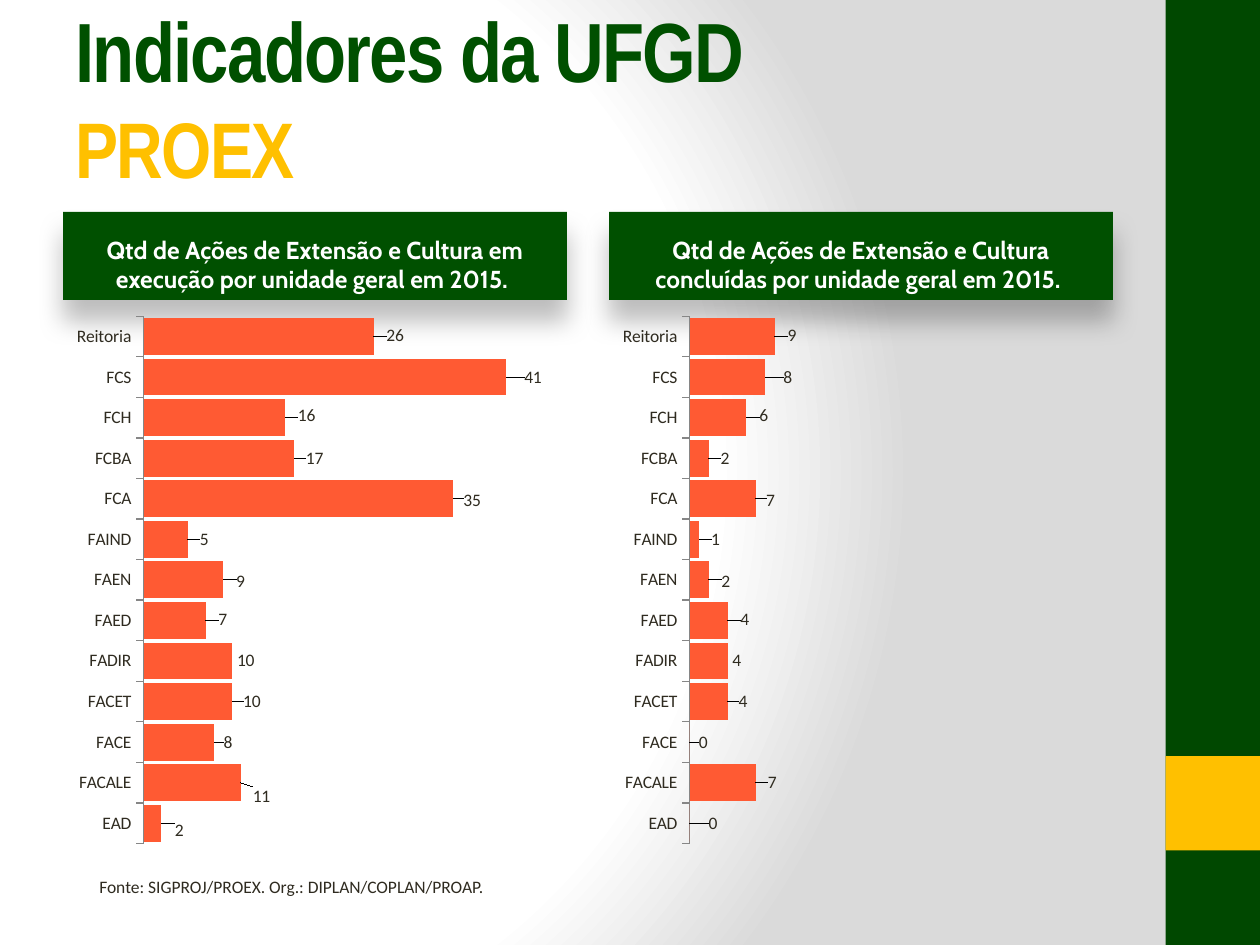
from dataclasses import dataclass

from lxml.etree import SubElement
from pptx import Presentation
from pptx.chart.data import CategoryChartData
from pptx.dml.color import RGBColor
from pptx.enum.chart import XL_CHART_TYPE as ChartType
from pptx.enum.chart import XL_LABEL_POSITION as LabelPos
from pptx.enum.chart import XL_TICK_MARK as Tick
from pptx.enum.shapes import MSO_SHAPE as Shape
from pptx.enum.text import MSO_ANCHOR as Anchor
from pptx.enum.text import MSO_AUTO_SIZE as AutoSize
from pptx.enum.text import PP_ALIGN as Align
from pptx.oxml import parse_xml
from pptx.oxml.ns import nsdecls, qn
from pptx.util import Pt


@dataclass(frozen=True)
class Theme:
    green: str = "005000"
    band_green: str = "004800"
    gold: str = "FFC000"
    bar: str = "FF5A33"
    ink: str = "2F2B20"
    axis: str = "868686"
    white: str = "FFFFFF"
    grey: str = "DADADA"
    title_font: str = "Arial Narrow"
    heading_font: str = "Cabin"
    body_font: str = "Calibri"
    title_size: float = 48
    subtitle_size: float = 45
    heading_size: float = 14
    small_size: float = 10


@dataclass(frozen=True)
class Panel:
    left: float
    heading_idx: int
    heading: str
    values: tuple
    axis_max: float
    moved: dict  # label offsets that differ from the common ones


THEME = Theme()
PANEL_W, HEADING_TOP, HEADING_H, CHART_H = 288, 121, 50.4, 311
UNITS = ("EAD", "FACALE", "FACE", "FACET", "FADIR", "FAED", "FAEN",
         "FAIND", "FCA", "FCBA", "FCH", "FCS", "Reitoria")

# Label offsets from the end of the bar, in points (right, down)
LABEL_OFFSETS = {
    "EAD": (5, 4), "FACALE": (4, 0), "FACE": (2.5, 0.5), "FACET": (3.5, 0),
    "FAED": (4.5, -0.5), "FAEN": (4.5, 1), "FAIND": (4, 0), "FCA": (3, 1),
    "FCBA": (4, 0), "FCH": (4.5, -1), "FCS": (7.5, 0), "Reitoria": (4.5, -0.5),
}
PANELS = (
    Panel(36, 1,
          "Qtd de Ações de Extensão e Cultura em execução por unidade geral em 2015. ",
          (2, 11, 8, 10, 10, 7, 9, 5, 35, 17, 16, 41, 26), 45,
          {"FACALE": (4, 8)}),
    Panel(348, 3,
          "Qtd de Ações de Extensão e Cultura concluídas por unidade geral em 2015. ",
          (0, 7, 0, 4, 4, 4, 2, 1, 7, 2, 6, 8, 9), 42,
          {"EAD": (8, 0)}),
)


def rgb(colour: str) -> RGBColor:
    return RGBColor.from_string(colour)


def place(shape, left: float, top: float, width: float, height: float) -> None:
    shape.left, shape.top = Pt(left), Pt(top)
    shape.width, shape.height = Pt(width), Pt(height)


def write(paragraph, text: str, *, font: str, size: float, colour: str,
          bold: bool = False, align=Align.LEFT, spacing: float = 0) -> None:
    paragraph.alignment = align
    run = paragraph.add_run()
    run.text = text
    run.font.name, run.font.size, run.font.bold = font, Pt(size), bold
    run.font.color.rgb = rgb(colour)
    if spacing:
        run.font._element.set("spc", str(int(spacing * 100)))


def set_background(slide) -> None:
    slide.background.fill.solid()
    properties = slide.element.find(".//" + qn("p:bgPr"))
    stops = "".join(
        f'<a:gs pos="{pos * 1000}"><a:srgbClr val="{colour}"/></a:gs>'
        for pos, colour in ((0, THEME.white), (75, THEME.white), (100, THEME.grey)))
    properties.replace(properties[0], parse_xml(
        f'<a:gradFill {nsdecls("a")} rotWithShape="1"><a:gsLst>{stops}</a:gsLst>'
        '<a:path path="circle"><a:fillToRect l="20000" t="50000" r="100000" b="50000"/>'
        '</a:path></a:gradFill>'))


def add_band(slide, top: float, height: float, colour: str) -> None:
    band = slide.shapes.add_shape(Shape.RECTANGLE, Pt(666), Pt(top), Pt(54), Pt(height))
    band.shadow.inherit = False
    band.fill.solid()
    band.fill.fore_color.rgb = rgb(colour)
    band.line.fill.background()


def add_heading(slide, panel: Panel) -> None:
    heading = slide.placeholders[panel.heading_idx]
    place(heading, panel.left, HEADING_TOP, PANEL_W, HEADING_H)
    heading.fill.solid()
    heading.fill.fore_color.rgb = rgb(THEME.green)
    heading._element.spPr.append(parse_xml(
        f'<a:effectLst {nsdecls("a")}><a:outerShdw blurRad="{Pt(15)}" dist="{Pt(12)}" '
        'dir="5400000" rotWithShape="0"><a:srgbClr val="000000">'
        '<a:alpha val="25000"/></a:srgbClr></a:outerShdw></a:effectLst>'))
    frame = heading.text_frame
    frame.auto_size, frame.vertical_anchor = AutoSize.NONE, Anchor.BOTTOM
    write(frame.paragraphs[0], panel.heading, font=THEME.heading_font,
          size=THEME.heading_size, colour=THEME.white, bold=True, align=Align.CENTER)


def manual_layout(**settings):
    layout = parse_xml(f'<c:layout {nsdecls("c")}><c:manualLayout/></c:layout>')
    for name, value in settings.items():
        SubElement(layout[0], qn(f"c:{name}")).set("val", str(value))
    return layout


def add_bars(slide, panel: Panel) -> None:
    data = CategoryChartData()
    data.categories = UNITS
    data.add_series("Series 1", panel.values)
    chart = slide.shapes.add_chart(
        ChartType.BAR_CLUSTERED, Pt(panel.left), Pt(HEADING_TOP + HEADING_H),
        Pt(PANEL_W), Pt(CHART_H), data).chart
    chart.has_legend = chart.has_title = False
    chart.font.name, chart.font.size = THEME.body_font, Pt(THEME.small_size)
    chart.font.color.rgb = rgb(THEME.ink)

    # Axes
    units, amounts = chart.category_axis, chart.value_axis
    units.major_tick_mark = Tick.OUTSIDE
    units.format.line.color.rgb = rgb(THEME.axis)
    units.has_major_gridlines = amounts.has_major_gridlines = False
    amounts.visible = False
    amounts.minimum_scale, amounts.maximum_scale = 0, panel.axis_max

    # Plot area
    area = chart._chartSpace.find(".//" + qn("c:plotArea"))
    for layout in area.findall(qn("c:layout")):
        area.remove(layout)
    area.insert(0, manual_layout(layoutTarget="inner", xMode="edge", yMode="edge",
                                 x=0.16, y=0.03, w=0.79, h=0.97))

    # Bars and their values
    plot = chart.plots[0]
    plot.gap_width, plot.vary_by_categories = 10, False
    bars = plot.series[0]
    bars.format.fill.solid()
    bars.format.fill.fore_color.rgb = rgb(THEME.bar)
    bars.data_labels.show_value = True
    bars.data_labels.position = LabelPos.OUTSIDE_END
    offsets = LABEL_OFFSETS | panel.moved
    for index, unit in enumerate(UNITS):
        if unit in offsets:
            right, down = offsets[unit]
            bars.points[index].data_label.position = LabelPos.OUTSIDE_END
            label = bars._element.findall(".//" + qn("c:dLbl"))[-1]
            label.insert(1, manual_layout(x=right / PANEL_W, y=down / CHART_H))


def main() -> None:
    deck = Presentation()
    deck.slide_width, deck.slide_height = Pt(720), Pt(540)
    slide = deck.slides.add_slide(deck.slide_layouts.get_by_name("Comparison"))
    set_background(slide)

    # Side bands
    add_band(slide, 0, 540, THEME.band_green)
    add_band(slide, 432, 54, THEME.gold)

    # Title
    title = slide.shapes.title
    place(title, 36, 21.6, 600, 67)
    title.text_frame.auto_size = AutoSize.NONE
    title.text_frame.vertical_anchor = Anchor.MIDDLE
    lines = title.text_frame.paragraphs[0]
    write(lines, "Indicadores da UFGD", font=THEME.title_font, size=THEME.title_size,
          colour=THEME.green, bold=True, spacing=-1)
    lines.add_line_break()
    write(lines, "PROEX", font=THEME.title_font, size=THEME.subtitle_size,
          colour=THEME.gold, bold=True, spacing=-1)

    # Headings with their charts
    for panel in PANELS:
        add_heading(slide, panel)
        unused = slide.placeholders[panel.heading_idx + 1]._element
        unused.getparent().remove(unused)
        add_bars(slide, panel)

    # Source note
    note = slide.shapes.add_textbox(Pt(49.7), Pt(496.8), Pt(244), Pt(19.4)).text_frame
    note.word_wrap = True
    write(note.paragraphs[0], "Fonte: SIGPROJ/PROEX. Org.: DIPLAN/COPLAN/PROAP.",
          font=THEME.body_font, size=THEME.small_size, colour=THEME.ink)

    deck.save("out.pptx")


if __name__ == "__main__":
    main()
